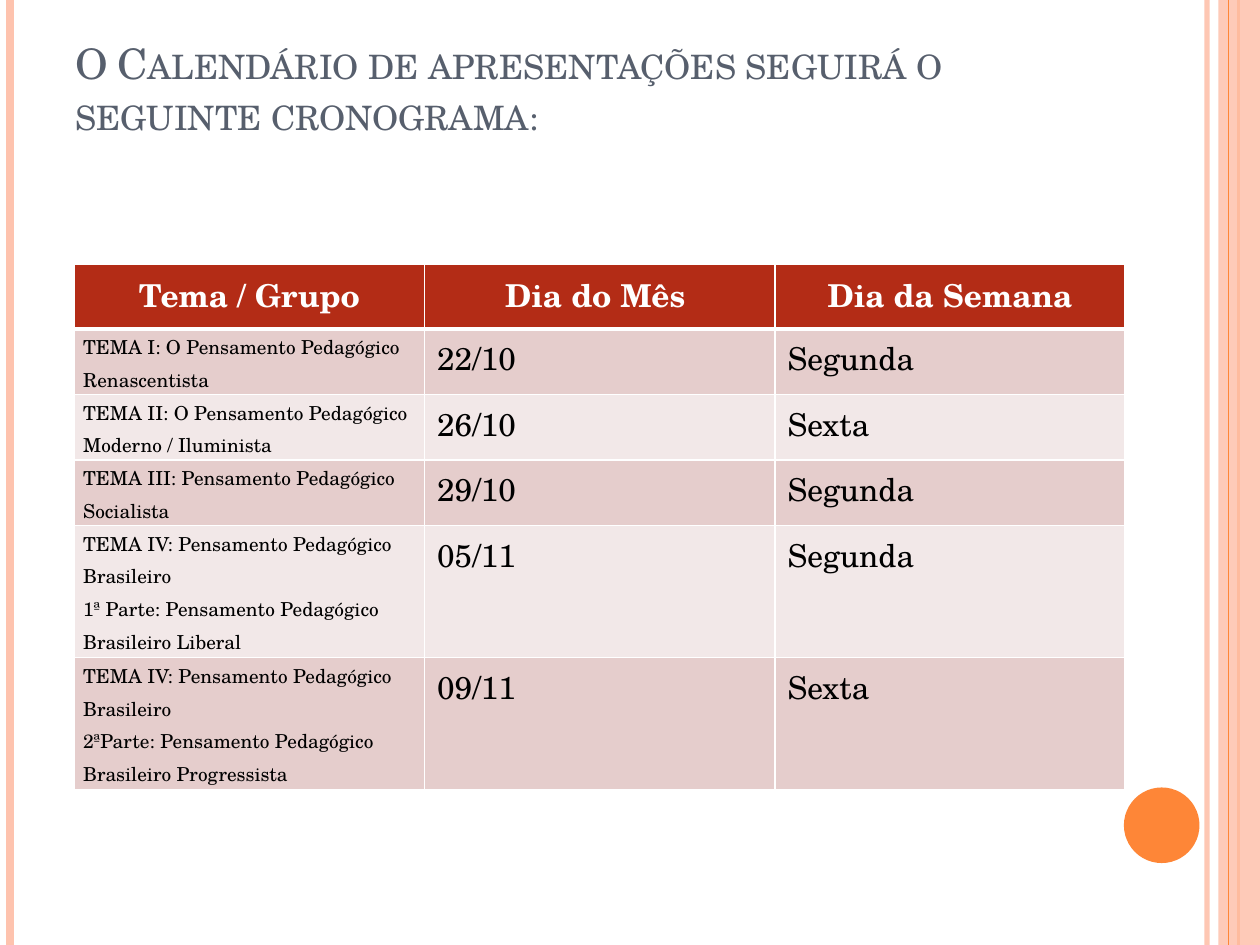
from dataclasses import dataclass

from lxml.etree import SubElement
from pptx import Presentation
from pptx.dml.color import RGBColor
from pptx.enum.shapes import MSO_CONNECTOR, MSO_SHAPE
from pptx.enum.text import MSO_ANCHOR, PP_ALIGN
from pptx.oxml.ns import qn
from pptx.util import Inches, Pt

FONT = "TeX Gyre Schola"
PEACH = RGBColor(0xFE, 0xC3, 0xAE)
ORANGE = RGBColor(0xFE, 0x86, 0x37)
SLATE = RGBColor(0x57, 0x5F, 0x6D)
RED = RGBColor(0xB3, 0x2C, 0x16)
ROSE = RGBColor(0xE5, 0xCD, 0xCC)
PALE = RGBColor(0xF2, 0xE8, 0xE8)
WHITE = RGBColor(0xFF, 0xFF, 0xFF)
BLACK = RGBColor(0, 0, 0)


@dataclass
class Stripe:
    left: float
    weight: float
    color: RGBColor
    alpha: int = 100


@dataclass
class Block:
    kind: MSO_SHAPE
    left: float
    top: float
    width: float
    height: float
    color: RGBColor
    alpha: int = 100


@dataclass
class Talk:
    theme: str
    date: str
    day: str
    height: float


DECOR = [
    Stripe(9.58, 3, PEACH, 93),
    Stripe(0.08, 4.5, PEACH),
    Stripe(9.83, 1.5, ORANGE),
    Block(MSO_SHAPE.RECTANGLE, 9.67, 0, 0.33, 7.5, PEACH, 87),
    Stripe(9.75, 0.75, ORANGE),
    Block(MSO_SHAPE.OVAL, 8.92, 6.25, 0.6, 0.6, ORANGE),
]
HEADS = ["Tema / Grupo", "Dia do Mês ", "Dia da Semana"]
TALKS = [
    Talk("TEMA I: O Pensamento Pedagógico Renascentista", "22/10", "Segunda", 0.52),
    Talk("TEMA II: O Pensamento Pedagógico Moderno / Iluminista", "26/10", "Sexta", 0.52),
    Talk("TEMA III: Pensamento Pedagógico Socialista", "29/10", "Segunda", 0.52),
    Talk("TEMA IV: Pensamento Pedagógico Brasileiro\n"
         "1ª Parte: Pensamento Pedagógico Brasileiro Liberal", "05/11", "Segunda", 1.05),
    Talk("TEMA IV: Pensamento Pedagógico Brasileiro\n"
         "2ªParte: Pensamento Pedagógico Brasileiro Progressista", "09/11", "Sexta", 1.05),
]


def fade(shape, alpha: int) -> None:
    if alpha < 100:
        for color in shape.element.iter(qn("a:srgbClr")):
            SubElement(color, qn("a:alpha"), val=str(alpha * 1000))


def draw_stripe(slide, item: Stripe) -> None:
    left = Inches(item.left)
    line = slide.shapes.add_connector(MSO_CONNECTOR.STRAIGHT, left, 0, left, Inches(7.5))
    line.line.color.rgb = item.color
    line.line.width = Pt(item.weight)
    SubElement(line.element.spPr, qn("a:effectLst"))
    fade(line, item.alpha)


def draw_block(slide, item: Block) -> None:
    shape = slide.shapes.add_shape(item.kind, Inches(item.left), Inches(item.top),
                                   Inches(item.width), Inches(item.height))
    shape.shadow.inherit = False
    shape.fill.solid()
    shape.fill.fore_color.rgb = item.color
    shape.line.fill.background()
    fade(shape, item.alpha)


def style(frame, size: float, color: RGBColor, bold: bool = False) -> None:
    for para in frame.paragraphs:
        for run in para.runs:
            run.font.name = FONT
            run.font.size = Pt(size)
            run.font.bold = bold
            run.font.color.rgb = color


def draw_title(slide, text: str) -> None:
    box = slide.shapes.add_textbox(Inches(0.5), Inches(0.3), Inches(8.17), Inches(1.25))
    frame = box.text_frame
    frame.word_wrap = True
    frame.vertical_anchor = MSO_ANCHOR.BOTTOM
    frame.margin_bottom = Inches(0.45)
    frame.text = text
    style(frame, 24, SLATE)
    for run in frame.paragraphs[0].runs:
        run.font.element.set("cap", "small") if hasattr(run.font, "element") \
            else run._r.get_or_add_rPr().set("cap", "small")


def paint(cell, color: RGBColor, top: float, bottom: float) -> None:
    props = cell._tc.get_or_add_tcPr()
    for side, weight in (("L", 1), ("R", 1), ("T", top), ("B", bottom)):
        edge = SubElement(props, qn(f"a:ln{side}"), w=str(Pt(weight)))
        solid = SubElement(edge, qn("a:solidFill"))
        SubElement(solid, qn("a:srgbClr"), val=str(WHITE))
    cell.fill.solid()
    cell.fill.fore_color.rgb = color


def fill_head(cell, text: str) -> None:
    cell.text_frame.text = text
    cell.text_frame.paragraphs[0].alignment = PP_ALIGN.CENTER
    style(cell.text_frame, 18, WHITE, True)
    paint(cell, RED, 1, 3)


def fill_theme(cell, text: str) -> None:
    cell.margin_left = cell.margin_right = Inches(0.07)
    cell.margin_top = cell.margin_bottom = 0
    cell.text_frame.text = text
    for para in cell.text_frame.paragraphs:
        para.line_spacing = 1.15
    style(cell.text_frame, 11, BLACK)


def draw_table(slide) -> None:
    heights = [0.51] + [talk.height for talk in TALKS]
    table = slide.shapes.add_table(len(heights), len(HEADS), Inches(0.59), Inches(2.1),
                                   Inches(8.34), Inches(sum(heights))).table
    for row, height in zip(table.rows, heights):
        row.height = Inches(height)
    for col, head in enumerate(HEADS):
        table.columns[col].width = Inches(2.78)
        fill_head(table.cell(0, col), head)
    for row, talk in enumerate(TALKS, 1):
        fill_theme(table.cell(row, 0), talk.theme)
        for col, text in enumerate((talk.date, talk.day), 1):
            frame = table.cell(row, col).text_frame
            frame.text = text
            style(frame, 18, BLACK)
        for cell in table.rows[row].cells:
            paint(cell, ROSE if row % 2 else PALE, 3 if row == 1 else 1, 1)


def main() -> None:
    deck = Presentation()
    deck.slide_width = Inches(10)
    deck.slide_height = Inches(7.5)
    slide = deck.slides.add_slide(deck.slide_layouts[6])
    for item in DECOR:
        if isinstance(item, Stripe):
            draw_stripe(slide, item)
        else:
            draw_block(slide, item)
    draw_title(slide, "O Calendário de apresentações seguirá o seguinte cronograma:")
    draw_table(slide)
    deck.save("out.pptx")


if __name__ == "__main__":
    main()
